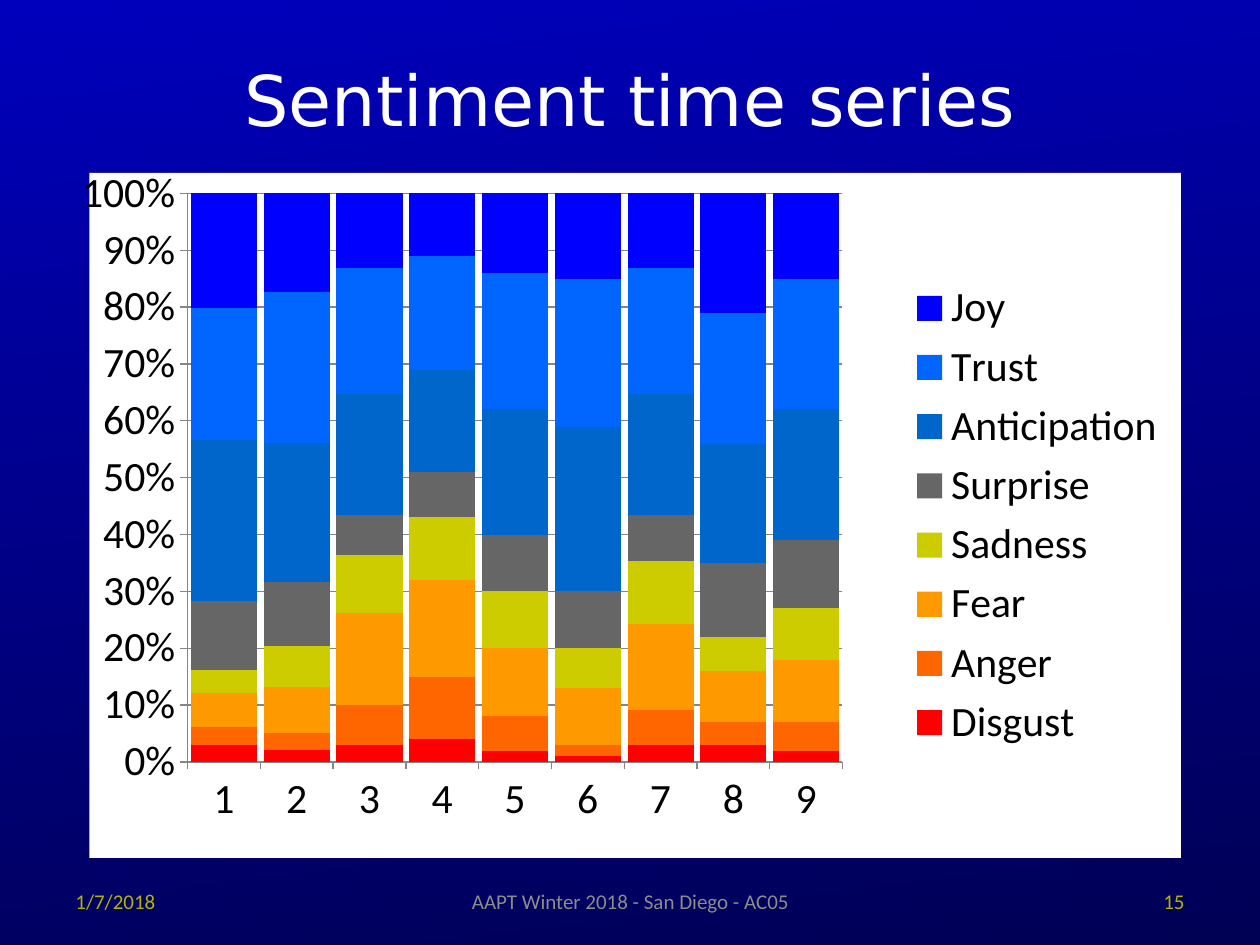
import lxml.etree
import pptx
import pptx.chart.data
import pptx.dml.color
import pptx.enum.chart
import pptx.enum.text
import pptx.oxml
import pptx.oxml.ns
import pptx.util

SCALE = 914400 / 126
ALIGN = pptx.enum.text.PP_ALIGN
CATEGORIES = [str(number) for number in range(1, 10)]
EMOTIONS = [
    ("Disgust", "FF0000", (3, 2, 3, 4, 2, 1, 3, 3, 2)),
    ("Anger", "FF6600", (3, 3, 7, 11, 6, 2, 6, 4, 5)),
    ("Fear", "FF9900", (6, 8, 16, 17, 12, 10, 15, 9, 11)),
    ("Sadness", "CCCC00", (4, 7, 10, 11, 10, 7, 11, 6, 9)),
    ("Surprise", "666666", (12, 11, 7, 8, 10, 10, 8, 13, 12)),
    ("Anticipation", "0066CC", (28, 24, 21, 18, 22, 29, 21, 21, 23)),
    ("Trust", "0066FF", (23, 26, 22, 20, 24, 26, 22, 23, 23)),
    ("Joy", "0000FF", (20, 17, 13, 11, 14, 15, 13, 21, 15)),
]


def px(length):
    return pptx.util.Emu(round(length * SCALE))


def color(value):
    return pptx.dml.color.RGBColor.from_string(value)


class SlideBuilder:
    font = "Calibri"
    line = "868686"

    def __init__(self, deck):
        self.slide = deck.slides.add_slide(deck.slide_layouts[6])

    def background(self, top, bottom, angle):
        fill = self.slide.background.fill
        fill.gradient()
        fill.gradient_angle = 360 - angle
        for stop, value in zip(fill.gradient_stops, (top, bottom)):
            stop.color.rgb = color(value)

    def text(self, frame, words, size, value, align, font=None):
        box = self.slide.shapes.add_textbox(*map(px, frame))
        box.text_frame.word_wrap = True
        box.text_frame.vertical_anchor = pptx.enum.text.MSO_ANCHOR.MIDDLE
        para = box.text_frame.paragraphs[0]
        para.alignment = align
        span = para.add_run()
        span.text = words
        span.font.size = pptx.util.Pt(size)
        span.font.name = font or self.font
        span.font.color.rgb = color(value)

    def stacked_chart(self, frame, categories, emotions, plot_area, size):
        data = pptx.chart.data.CategoryChartData()
        data.categories = categories
        for name, _, values in emotions:
            data.add_series(name, values)
        kind = pptx.enum.chart.XL_CHART_TYPE.COLUMN_STACKED_100
        chart = self.slide.shapes.add_chart(kind, *map(px, frame), data).chart
        chart.has_title = False
        chart.font.name = self.font
        chart.font.size = pptx.util.Pt(size)
        chart.font.color.rgb = color("000000")
        plot = chart.plots[0]
        plot.gap_width = 10
        plot.overlap = 100
        plot.vary_by_categories = False
        for series, (_, value, _) in zip(plot.series, emotions):
            series.format.fill.solid()
            series.format.fill.fore_color.rgb = color(value)
        for axis in (chart.category_axis, chart.value_axis):
            axis.major_tick_mark = pptx.enum.chart.XL_TICK_MARK.OUTSIDE
            axis.tick_labels.font.size = pptx.util.Pt(size)
            axis.format.line.color.rgb = color(self.line)
        scale = chart.value_axis
        scale.minimum_scale, scale.maximum_scale, scale.major_unit = 0, 1, 0.1
        scale.tick_labels.number_format = "0%"
        scale.tick_labels.number_format_is_linked = False
        scale.has_major_gridlines = True
        scale.major_gridlines.format.line.color.rgb = color(self.line)
        chart.has_legend = True
        chart.legend.position = pptx.enum.chart.XL_LEGEND_POSITION.RIGHT
        chart.legend.include_in_layout = False
        chart.legend.font.size = pptx.util.Pt(size)
        self.place_plot(chart, plot_area)
        self.fill_chart(chart, "FFFFFF")

    def place_plot(self, chart, plot_area):
        qn = pptx.oxml.ns.qn
        area = chart.element.find(".//" + qn("c:plotArea"))
        for old in area.findall(qn("c:layout")):
            area.remove(old)
        layout = lxml.etree.Element(qn("c:layout"))
        manual = lxml.etree.SubElement(layout, qn("c:manualLayout"))
        settings = [("layoutTarget", "inner"), ("xMode", "edge"), ("yMode", "edge")]
        settings += zip("xywh", plot_area)
        for tag, value in settings:
            lxml.etree.SubElement(manual, qn("c:" + tag), val=str(value))
        area.insert(0, layout)

    def fill_chart(self, chart, value):
        qn = pptx.oxml.ns.qn
        properties = pptx.oxml.parse_xml(
            f'<c:spPr {pptx.oxml.ns.nsdecls("c", "a")}><a:solidFill>'
            f'<a:srgbClr val="{value}"/></a:solidFill>'
            "<a:ln><a:noFill/></a:ln></c:spPr>"
        )
        chart.element.find(qn("c:chart")).addnext(properties)


def main():
    deck = pptx.Presentation()
    deck.slide_width, deck.slide_height = px(1260), px(945)
    page = SlideBuilder(deck)
    page.background("0000BC", "000054", 83)
    page.text((63, 38, 1134, 120), "Sentiment time series", 40, "FFFFFF",
              ALIGN.CENTER, "DejaVu Sans")
    footers = [
        (63, 294, "1/7/2018", "B2B203", ALIGN.LEFT),
        (431, 399, "AAPT Winter 2018 - San Diego - AC05", "8C8C8C", ALIGN.CENTER),
        (903, 294, "15", "B2B203", ALIGN.RIGHT),
    ]
    for left, width, words, value, align in footers:
        page.text((left, 876, width, 50), words, 12, value, align)
    page.stacked_chart((82, 168, 1099, 690), CATEGORIES, EMOTIONS,
                       (0.09, 0.03, 0.6, 0.83), 24)
    deck.save("out.pptx")


if __name__ == "__main__":
    main()
